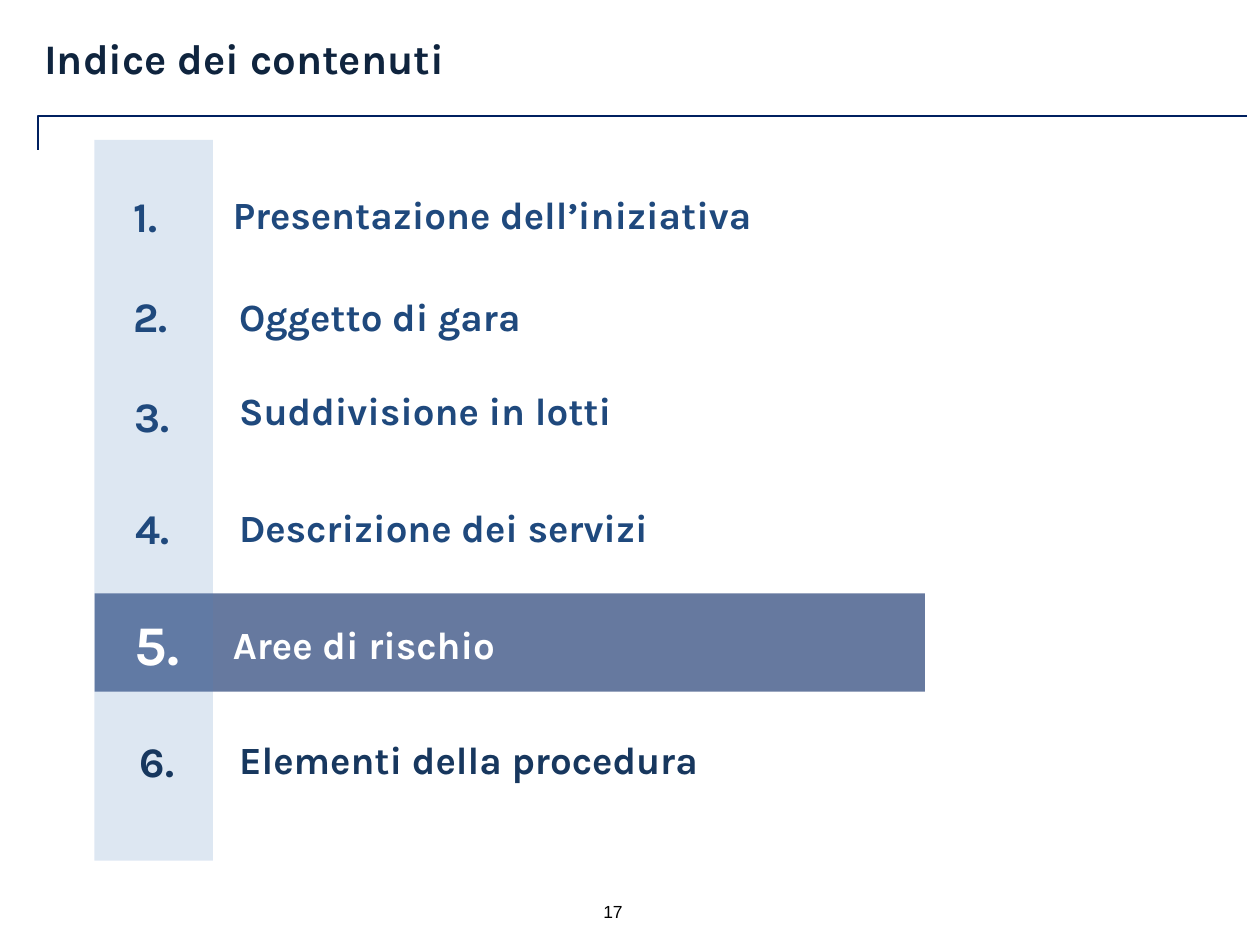
from dataclasses import dataclass

from lxml.etree import SubElement
from pptx import Presentation
from pptx.dml.color import RGBColor as RGB
from pptx.enum.shapes import MSO_CONNECTOR as CONN, MSO_SHAPE as SHAPE
from pptx.enum.text import MSO_ANCHOR as ANCHOR, MSO_AUTO_SIZE as AUTO, PP_ALIGN as ALIGN
from pptx.oxml.ns import qn
from pptx.util import Inches, Pt


@dataclass(frozen=True)
class Theme:
    font: str = "Karla"
    page_font: str = "Arial"
    title: str = "0F243E"
    item: str = "1F497D"
    last_item: str = "17375E"
    active: str = "FFFFFF"
    page: str = "000000"
    navy: str = "002060"
    column: str = "4F81BD"
    title_size: int = 24
    number_size: int = 24
    active_number_size: int = 32
    item_size: int = 22
    page_size: int = 10


class SlideBuilder:
    def __init__(self, prs, theme):
        self.theme = theme
        self.s = prs.slides.add_slide(prs.slide_layouts[5])

    def style(self, p, size, color, font=None, bold=True):
        p.font.name = font or self.theme.font
        p.font.size = Pt(size)
        p.font.bold = bold
        p.font.color.rgb = RGB.from_string(color)

    def title(self, text, left, top, width, height):
        sp = self.s.shapes.title
        sp.left, sp.top, sp.width, sp.height = map(Inches, (left, top, width, height))
        tf = sp.text_frame
        tf.text = text
        tf.word_wrap = True
        tf.auto_size = AUTO.NONE
        tf.vertical_anchor = ANCHOR.TOP
        tf.margin_left = tf.margin_right = tf.margin_bottom = 0
        tf.margin_top = Inches(0.04)
        p = tf.paragraphs[0]
        p.alignment = ALIGN.LEFT
        p.line_spacing = 0.85
        self.style(p, self.theme.title_size, self.theme.title)

    def text(self, text, left, top, width, height, size, color, **font):
        box = self.s.shapes.add_textbox(*map(Inches, (left, top, width, height)))
        tf = box.text_frame
        tf.text = text
        tf.word_wrap = True
        tf.auto_size = AUTO.SHAPE_TO_FIT_TEXT
        self.style(tf.paragraphs[0], size, color, **font)

    def band(self, left, top, width, height, color, opacity):
        """Draw a borderless rectangle; opacity is a percentage."""
        sp = self.s.shapes.add_shape(SHAPE.RECTANGLE, *map(Inches, (left, top, width, height)))
        sp.shadow.inherit = False
        sp.line.fill.background()
        sp.fill.solid()
        sp.fill.fore_color.rgb = RGB.from_string(color)
        clr = sp.fill._xPr.find(".//" + qn("a:srgbClr"))
        SubElement(clr, qn("a:alpha")).set("val", str(opacity * 1000))

    def corner_rule(self, left, top, right, bottom, color):
        """Draw a one-bend connector: up the left side, then along the top."""
        cx, cy = (left + right) / 2, (top + bottom) / 2
        dx, dy = (bottom - top) / 2, (right - left) / 2
        cxn = self.s.shapes.add_connector(
            CONN.ELBOW, *map(Inches, (cx + dx, cy + dy, cx - dx, cy - dy)))
        cxn.line.color.rgb = RGB.from_string(color)
        cxn.line.width = Pt(1)
        sp_pr = cxn._element.spPr
        sp_pr.find(qn("a:xfrm")).set("rot", str(90 * 60000))
        sp_pr.find(qn("a:prstGeom")).set("prst", "bentConnector2")
        SubElement(sp_pr, qn("a:effectLst"))


# number left, number top, label left, label top, label
ITEMS = [
    (0.96, 1.46, 1.75, 1.47, "Presentazione dell’iniziativa"),
    (0.96, 2.26, 1.8, 2.28, "Oggetto di gara"),
    (0.97, 3.05, 1.8, 3.02, "Suddivisione in lotti"),
    (0.98, 3.94, 1.8, 3.95, "Descrizione dei servizi"),
    (0.97, 4.79, 1.75, 4.88, "Aree di rischio"),
    (1.01, 5.79, 1.8, 5.79, "Elementi della procedura"),
]
ACTIVE = 5


def main():
    prs = Presentation()
    prs.slide_width, prs.slide_height = Inches(10), Inches(7.5)
    t = Theme()
    b = SlideBuilder(prs, t)

    b.title("Indice dei contenuti", 0.35, 0.28, 9, 0.5)
    b.text("17", 4.69, 7.1, 0.47, 0.27, t.page_size, t.page, font=t.page_font, bold=False)
    b.corner_rule(0.3, 0.92, 9.9, 1.19, t.navy)
    b.band(0.75, 4.71, 6.59, 0.78, t.navy, 60)
    b.band(0.75, 1.11, 0.94, 5.72, t.column, 19)

    colors = {ACTIVE: t.active, len(ITEMS): t.last_item}
    for n, (num_left, num_top, left, top, label) in enumerate(ITEMS, 1):
        color = colors.get(n, t.item)
        size, height = (t.active_number_size, 0.64) if n == ACTIVE else (t.number_size, 0.5)
        b.text(f"{n}.", num_left, num_top, 0.73, height, size, color)
        b.text(label, left, top, 5.43, 0.47, t.item_size, color)

    prs.save("out.pptx")


if __name__ == "__main__":
    main()
